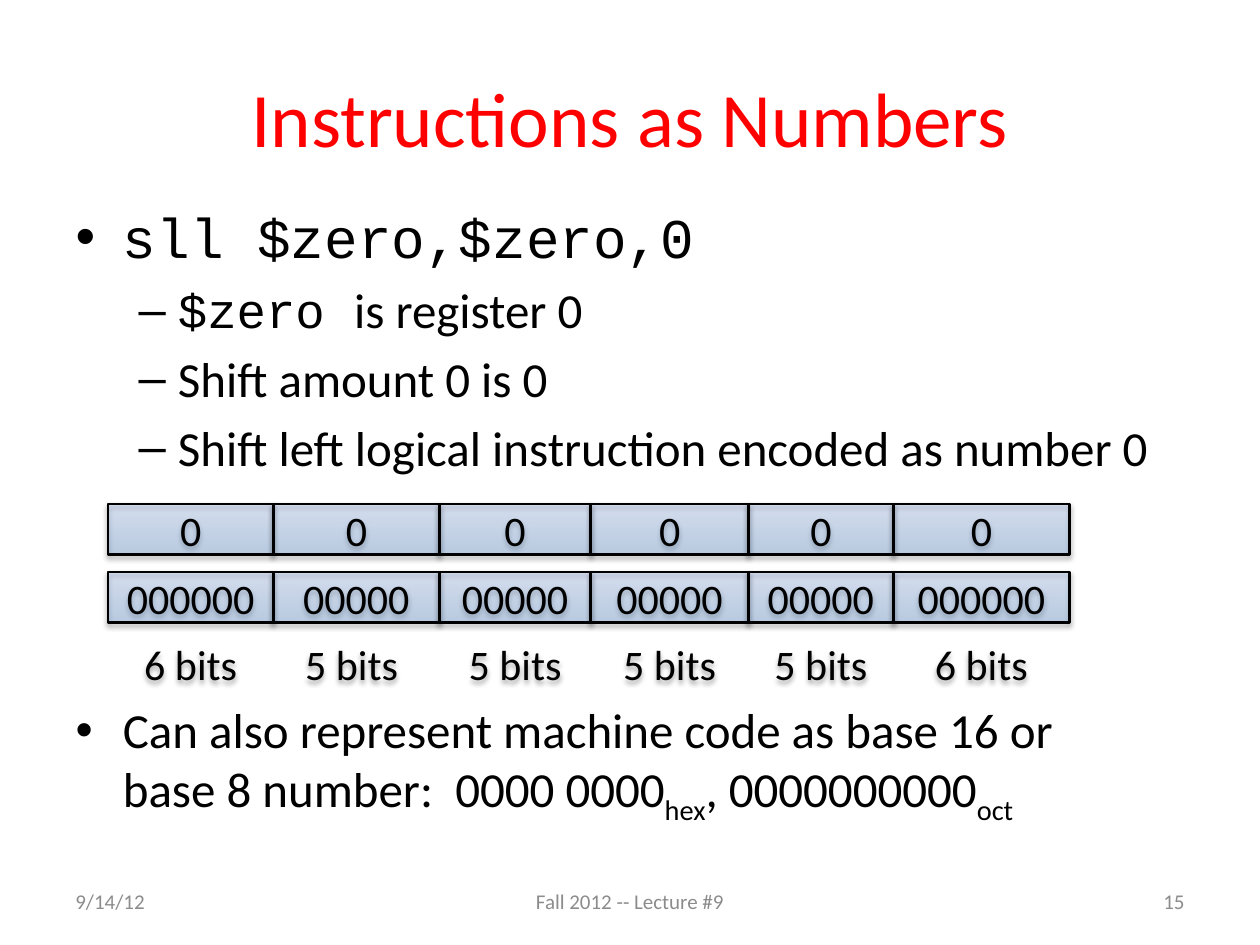
import pptx
import pptx.dml.color
import pptx.enum.dml
import pptx.enum.shapes
import pptx.enum.text
import pptx.oxml
import pptx.oxml.ns
import pptx.util

Cm, Pt = pptx.util.Cm, pptx.util.Pt
ALIGN = pptx.enum.text.PP_ALIGN
MIDDLE = pptx.enum.text.MSO_ANCHOR.MIDDLE
SHADOW = (
    f'<a:effectLst {pptx.oxml.ns.nsdecls("a")}>'
    '<a:outerShdw blurRad="39370" dist="22860" dir="5400000" rotWithShape="0">'
    '<a:srgbClr val="000000"><a:alpha val="35000"/></a:srgbClr>'
    '</a:outerShdw></a:effectLst>'
)


def rgb(value):
    return pptx.dml.color.RGBColor.from_string(value)


def format_runs(p, size, color="000000", font="Calibri"):
    for r in p.runs:
        r.font.size = Pt(size)
        r.font.name = font
        r.font.color.rgb = rgb(color)


prs = pptx.Presentation()
prs.slide_width, prs.slide_height = Cm(25.4), Cm(19.05)
s = prs.slides.add_slide(prs.slide_layouts[1])

# Title
title = s.shapes.title
title.left, title.top, title.width, title.height = Cm(1.27), Cm(0.76), Cm(22.86), Cm(3.18)
title.text_frame.text = "Instructions as Numbers"
title.text_frame.vertical_anchor = MIDDLE
format_runs(title.text_frame.paragraphs[0], 44, "FF0000")

# Bullets
body = s.placeholders[1]
body.left, body.top, body.width, body.height = Cm(1.27), Cm(3.96), Cm(22.86), Cm(14.6)
tf = body.text_frame
tf.auto_size = pptx.enum.text.MSO_AUTO_SIZE.NONE
bullets = [
    (0, 32, ["sll $zero,$zero,0"]),
    (1, 28, ["$zero ", "is register 0"]),
    (1, 28, ["Shift amount 0 is 0"]),
    (1, 28, ["Shift left logical instruction encoded as number 0"]),
    (0, 28, ["Can also represent machine code as base 16 or \vbase 8 number:  0000 0000",
             "hex", ", 0000000000", "oct"]),
]
for i, (level, size, parts) in enumerate(bullets):
    p = tf.paragraphs[0] if i == 0 else tf.add_paragraph()
    p.level = level
    p.text = parts[0]
    for part in parts[1:]:
        p.add_run().text = part
    format_runs(p, size)
    for r in p.runs:
        if r.text.startswith(("sll", "$zero")):
            r.font.name = "Courier New"
        if r.text in ("hex", "oct"):
            r.font._element.set("baseline", "-25000")
# The instruction fields stand in the gap above the last bullet
p.space_before = Pt(128)

# Instruction fields: two rows of boxes and a row of widths
edges = [2.18, 5.51, 8.86, 11.91, 15.09, 18.01, 21.56]
rows = [
    (11.53, True, ["000000", "00000", "00000", "00000", "00000", "000000"]),
    (10.16, True, ["0"] * 6),
    (12.88, False, ["6 bits", "5 bits ", "5 bits", "5 bits", "5 bits", "6 bits"]),
]
for top, boxed, texts in rows:
    for left, right, text in zip(edges, edges[1:], texts):
        sp = s.shapes.add_shape(pptx.enum.shapes.MSO_SHAPE.RECTANGLE,
                                Cm(left), Cm(top), Cm(right - left), Cm(1.02))
        if boxed:
            sp.fill.gradient()
            sp.fill.gradient_angle = 90
            for stop, color in zip(sp.fill.gradient_stops, ("3F80CE", "A4C4FF")):
                stop.color.rgb = rgb(color)
            for clr in sp.fill._xPr.iter(pptx.oxml.ns.qn("a:srgbClr")):
                clr.append(pptx.oxml.parse_xml(
                    f'<a:alpha {pptx.oxml.ns.nsdecls("a")} val="27000"/>'))
            sp.line.color.rgb = rgb("000000")
            sp.line.width = Pt(1.5)
        else:
            sp.fill.background()
            sp.line.fill.background()
        sp._element.spPr.append(pptx.oxml.parse_xml(SHADOW))
        tf = sp.text_frame
        tf.text = text
        tf.word_wrap = False
        tf.vertical_anchor = MIDDLE
        tf.paragraphs[0].alignment = ALIGN.CENTER
        format_runs(tf.paragraphs[0], 24)

# Footer
footers = [
    (1.27, 5.93, "9/14/12", ALIGN.LEFT),
    (8.68, 8.04, "Fall 2012 -- Lecture #9", ALIGN.CENTER),
    (18.2, 5.93, "15", ALIGN.RIGHT),
]
for left, width, text, align in footers:
    tf = s.shapes.add_textbox(Cm(left), Cm(17.66), Cm(width), Cm(1.01)).text_frame
    tf.text = text
    tf.word_wrap = True
    tf.vertical_anchor = MIDDLE
    tf.paragraphs[0].alignment = align
    format_runs(tf.paragraphs[0], 12, "8C8C8C")

prs.save("out.pptx")
